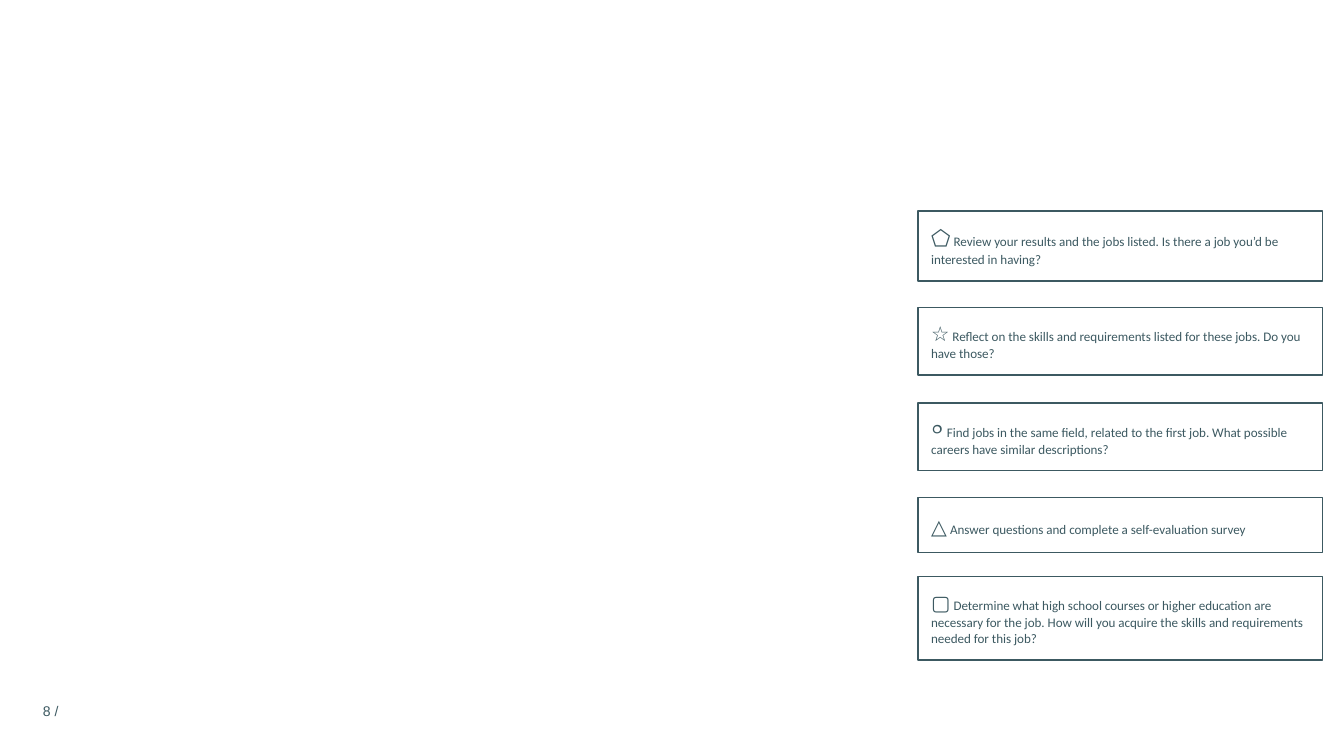
from dataclasses import dataclass

from pptx import Presentation
from pptx import util as u
from pptx.dml.color import RGBColor
from pptx.enum import shapes, text

HUES = {"ink": "3C5961"}
INK = RGBColor.from_string(HUES["ink"])


@dataclass
class Step:
    top: float
    high: float
    icon: str
    words: str
    size: float = 11
    lead: float = 1.0


STEPS = [
    Step(3.7, 0.41, "△", "Answer questions and complete a self-evaluation "
         "survey", lead=1.15),
    Step(4.29, 0.62, "▢", "Determine what high school courses or higher "
         "education are necessary for the job. How will you acquire the "
         "skills and requirements needed for this job?"),
    Step(3, 0.5, "𐩒", "Find jobs in the same field, related to the first "
         "job. What possible careers have similar descriptions?"),
    Step(2.29, 0.5, "☆", "Reflect on the skills and requirements listed "
         "for these jobs. Do you have those?"),
    Step(1.57, 0.52, "⬠", "Review your results and the jobs listed. "
         "Is there a job you’d be interested in having?", size=12),
]


def draw_step(slide, step: Step) -> None:
    box = slide.shapes.add_shape(
        shapes.MSO_SHAPE.RECTANGLE, u.Inches(6.83), u.Inches(step.top),
        u.Inches(3.01), u.Inches(step.high))
    box.shadow.inherit = False
    box.fill.background()
    box.line.color.rgb = INK
    box.line.width = u.Pt(0.75)
    frame = box.text_frame
    frame.word_wrap = True
    frame.auto_size = text.MSO_AUTO_SIZE.SHAPE_TO_FIT_TEXT
    frame.vertical_anchor = text.MSO_ANCHOR.TOP
    frame.margin_left = frame.margin_right = u.Inches(0.1)
    frame.margin_top = frame.margin_bottom = u.Inches(0.1)
    para = frame.paragraphs[0]
    para.alignment = text.PP_ALIGN.LEFT
    para.line_spacing = step.lead
    para.font.name = "Calibri"
    para.font.color.rgb = INK
    for words, size in ((step.icon, step.size), (" " + step.words, 7)):
        run = para.add_run()
        run.text = words
        run.font.size = u.Pt(size)


def draw_page(slide, label: str) -> None:
    box = slide.shapes.add_textbox(
        u.Inches(0.23), u.Inches(5.18), u.Inches(0.37), u.Inches(0.3))
    frame = box.text_frame
    frame.word_wrap = True
    frame.vertical_anchor = text.MSO_ANCHOR.TOP
    frame.margin_left = u.Inches(0.09)
    frame.margin_right = u.Inches(0)
    para = frame.paragraphs[0]
    para.text = label
    para.font.name = "Arial"
    para.font.size = u.Pt(7.5)
    para.font.color.rgb = INK


def main() -> None:
    deck = Presentation()
    deck.slide_width = u.Inches(10)
    deck.slide_height = u.Inches(10) * 9 // 16
    slide = deck.slides.add_slide(deck.slide_layouts[6])
    draw_page(slide, "8 /")
    for step in STEPS:
        draw_step(slide, step)
    deck.save("out.pptx")


if __name__ == "__main__":
    main()
